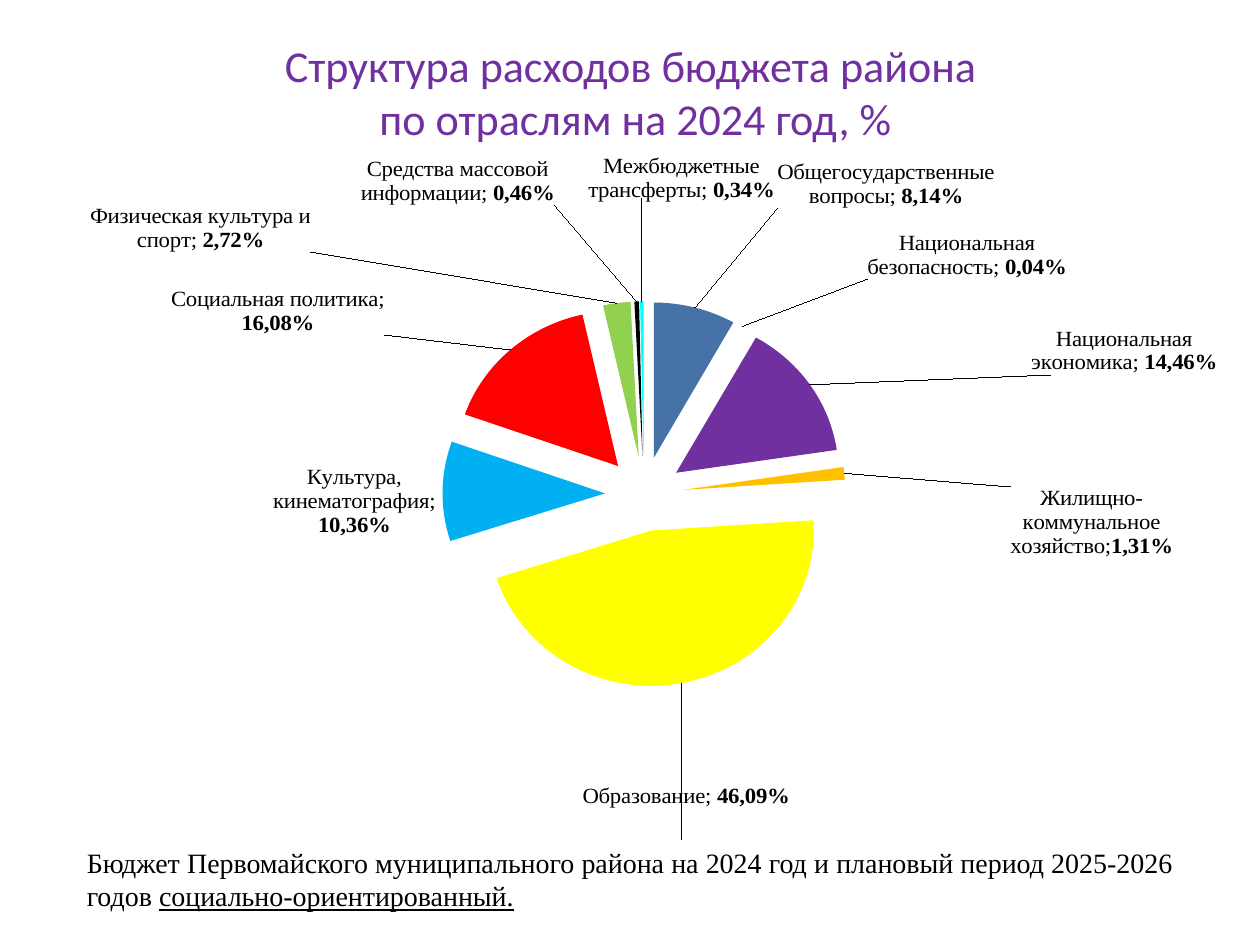
from lxml import etree
from pptx import Presentation
from pptx.chart.data import CategoryChartData
from pptx.dml.color import RGBColor
from pptx.enum.chart import XL_CHART_TYPE, XL_LABEL_POSITION
from pptx.enum.text import MSO_ANCHOR, PP_ALIGN
from pptx.oxml import parse_xml
from pptx.oxml.ns import nsdecls, qn
from pptx.util import Inches, Pt

PIE = XL_CHART_TYPE.PIE
BEST_FIT = XL_LABEL_POSITION.BEST_FIT
TOP, MIDDLE = MSO_ANCHOR.TOP, MSO_ANCHOR.MIDDLE
CENTER, JUSTIFY = PP_ALIGN.CENTER, PP_ALIGN.JUSTIFY

COLORS = {
    "title": "7030A0", "text": "000000", "paper": "FFFFFF",
    "general": "4672A8", "safety": "FFFFFF", "economy": "7030A0",
    "housing": "FFC000", "education": "FFFF00", "culture": "00B0F0",
    "social": "FF0000", "sport": "92D050", "media": "000000",
    "transfers": "00FFFF",
}
RGB = {name: RGBColor.from_string(value) for name, value in COLORS.items()}

# The slide is a grid of 100 columns by 75 rows.
CELL = Inches(0.1)

# colour, category, separator, share, label shift in percent of the chart's size
SECTORS = [
    ("general", "Общегосударственные вопросы", "; ", 0.0814, (6.85, -14.17)),
    ("safety", "Национальная безопасность", "; ", 0.0004, (10.29, -6.26)),
    ("economy", "Национальная экономика", "; ", 0.1446, (19.92, -0.89)),
    ("housing", "Жилищно-коммунальное хозяйство", ";", 0.0131, (13.5, 13.15)),
    ("education", "Образование", "; ", 0.4609, (-8.56, 22.8)),
    ("culture", "Культура, кинематография", "; ", 0.1036, (0.05, 1.6)),
    ("social", "Социальная политика", "; ", 0.1608, (-10.26, -1.48)),
    ("sport", "Физическая культура и спорт", "; ", 0.0272, (-25.94, -6.73)),
    ("media", "Средства массовой информации", "; ", 0.0046, (-15.22, -13.65)),
    ("transfers", "Межбюджетные трансферты", "; ", 0.0034, (3.38, -14.7)),
]


def add_spans(para, spans, color, font):
    """Add (text, extra font values) spans to a paragraph; None breaks the line."""
    for part in spans:
        if part is None:
            para.add_line_break()
            continue
        text, extra = part
        span = para.add_run()
        span.text = text
        for name, value in {**font, **extra}.items():
            setattr(span.font, name, value)
        span.font.color.rgb = RGB[color]


def manual_layout(values):
    layout = parse_xml(f'<c:layout {nsdecls("c")}><c:manualLayout/></c:layout>')
    for tag, value in values.items():
        etree.SubElement(layout[0], qn(f"c:{tag}")).set("val", str(value))
    return layout


deck = Presentation()
deck.slide_width, deck.slide_height = 100 * CELL, 75 * CELL
page = deck.slides.add_slide(deck.slide_layouts[6])

# Title and closing statement
TEXTS = [
    ((2.8, 3, 94.5, 8.5), CENTER, MIDDLE, "title",
     {"name": "Calibri", "size": Pt(25.2)},
     [("Структура расходов бюджета района", {}), None,
      (" по отраслям на 2024 год, %", {})]),
    ((5.9, 66.6, 88.2, 6.4), JUSTIFY, TOP, "text",
     {"name": "Times New Roman", "size": Pt(16)},
     [("Бюджет Первомайского муниципального района на 2024 год и плановый "
       "период 2025-2026 годов ", {}),
      ("социально-ориентированный.", {"underline": True})]),
]
for place, align, anchor, color, font, spans in TEXTS:
    box = page.shapes.add_textbox(*(round(count * CELL) for count in place))
    box.text_frame.word_wrap = True
    box.text_frame.vertical_anchor = anchor
    para = box.text_frame.paragraphs[0]
    para.alignment = align
    add_spans(para, spans, color, font)
    if color == "title":
        box.fill.solid()
        box.fill.fore_color.rgb = RGB["paper"]

# Exploded pie
data = CategoryChartData(number_format="0.00%")
data.categories = [sector[1] for sector in SECTORS]
data.add_series("Series 1", [sector[3] for sector in SECTORS])
place = (3.3, 12.3, 93.3, 54.3)
chart = page.shapes.add_chart(
    PIE, *(round(count * CELL) for count in place), data).chart
chart.has_title = chart.has_legend = False
chart.font.name, chart.font.size = "Calibri", Pt(10)
chart.font.color.rgb = RGB["text"]
plot = chart.plots[0]
plot.vary_by_categories = True
series = plot.series[0]

label_font = {"name": "Times New Roman", "size": Pt(13)}
labels = series.data_labels
for name, value in {"show_value": True, "show_category_name": True,
                    "number_format": "0.00%", "number_format_is_linked": False,
                    "position": BEST_FIT}.items():
    setattr(labels, name, value)
for name, value in label_font.items():
    setattr(labels.font, name, value)
labels.font.color.rgb = RGB["text"]

for index, (color, category, separator, share, _) in enumerate(SECTORS):
    point = series.points[index]
    point.format.fill.solid()
    point.format.fill.fore_color.rgb = RGB[color]
    point.format.line.fill.background()
    percent = f"{share:.2%}".replace(".", ",")
    add_spans(point.data_label.text_frame.paragraphs[0],
              [(category + separator, {}), (percent, {"bold": True})],
              "text", label_font)
    point.data_label.position = BEST_FIT

# Label shifts, leader lines, explosion and plot area
pie_series = series._element
label_list = pie_series.find(qn("c:dLbls"))
for label, sector in zip(label_list.findall(qn("c:dLbl")), SECTORS):
    across, down = (round(shift / 100, 4) for shift in sector[4])
    label.find(qn("c:idx")).addnext(manual_layout({"x": across, "y": down}))
    label.find(qn("c:showCatName")).set("val", "1")
leaders = label_list.find(qn("c:showLeaderLines"))
if leaders is None:
    leaders = etree.SubElement(label_list, qn("c:showLeaderLines"))
leaders.set("val", "1")

pie_series.find(qn("c:dPt")).addprevious(
    parse_xml(f'<c:explosion {nsdecls("c")} val="24"/>'))
plot_area = pie_series.getparent().getparent()
for old_layout in plot_area.findall(qn("c:layout")):
    plot_area.remove(old_layout)
plot_area.insert(0, manual_layout({
    "layoutTarget": "inner", "xMode": "edge", "yMode": "edge",
    "x": 0.209, "y": 0.224, "w": 0.607, "h": 0.589}))

deck.save("out.pptx")
